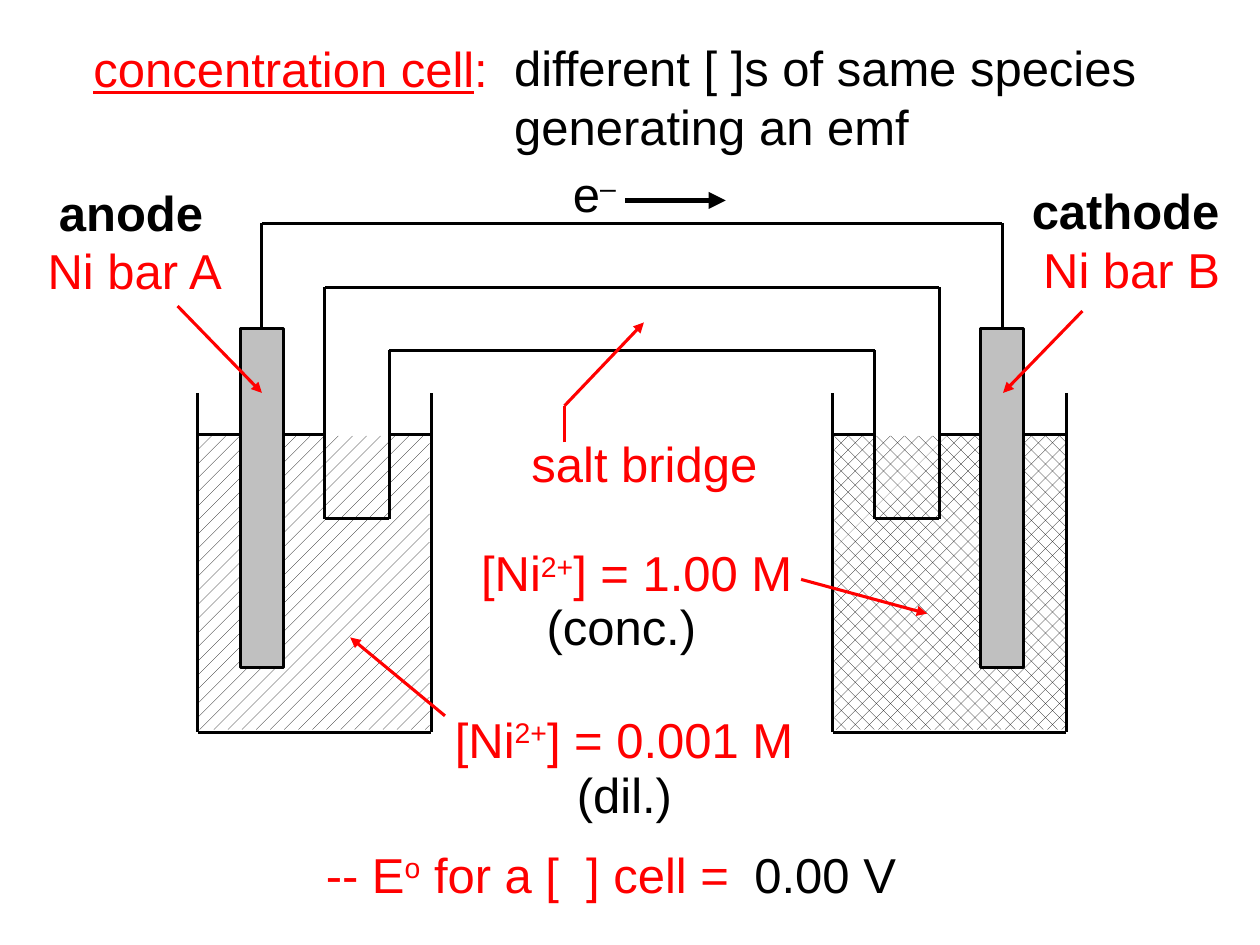
"""Build a slide explaining a nickel concentration cell."""
from dataclasses import dataclass
from itertools import pairwise

from lxml import etree
from pptx import Presentation
from pptx import util as u
from pptx.dml.color import RGBColor
from pptx.enum import dml, shapes, text
from pptx.oxml.ns import qn

BLACK, RED, GREY, WHITE = "000000", "FF0000", "C0C0C0", "FFFFFF"
MIRROR_SUM = 25.48
Point = tuple[float, float]


@dataclass
class Label:
    """A text with carets around its superscripts, placed in centimetres."""
    content: str
    left: float
    top: float
    width: float
    height: float = 1.45
    color: str = BLACK
    bold: bool = False
    wrap: bool = False
    align: text.PP_ALIGN = text.PP_ALIGN.LEFT


@dataclass
class Route:
    """A chain of straight segments, optionally ending in an arrowhead."""
    points: list[Point]
    color: str = BLACK
    width: float = 1.75
    arrow: bool = False


def rgb(value: str) -> RGBColor:
    """Turn a hex string into a colour."""
    return RGBColor.from_string(value)


def cm(*values: float) -> list[u.Cm]:
    """Turn numbers into lengths."""
    return [u.Cm(value) for value in values]


def write(paragraph, content: str, color: str, bold: bool = False) -> None:
    """Add the runs of a content, raising the parts between carets."""
    for index, part in enumerate(content.split("^")):
        if part:
            run = paragraph.add_run()
            run.text = part
            run.font.name, run.font.size = "Arial", u.Pt(28)
            run.font.bold = bold
            run.font.color.rgb = rgb(color)
            if index % 2:
                run.font._element.set("baseline", "30000")


def draw_label(slide, label: Label) -> None:
    """Draw a label as a text box."""
    box = slide.shapes.add_textbox(*cm(label.left, label.top, label.width, label.height))
    box.text_frame.word_wrap = label.wrap
    paragraph = box.text_frame.paragraphs[0]
    paragraph.alignment = label.align
    write(paragraph, label.content, label.color, label.bold)


def draw_route(slide, route: Route) -> None:
    """Draw each segment of a route as a connector."""
    for start, end in pairwise(route.points):
        segment = slide.shapes.add_connector(shapes.MSO_CONNECTOR.STRAIGHT, *cm(*start, *end))
        segment.line.color.rgb = rgb(route.color)
        segment.line.width = u.Pt(route.width)
        etree.SubElement(segment._element.spPr, qn("a:effectLst"))
    if route.arrow:
        etree.SubElement(segment.line._get_or_add_ln(), qn("a:tailEnd"), type="triangle")


def draw_rectangle(slide, left: float, top: float, width: float, height: float):
    """Draw a plain rectangle without shadow."""
    rectangle = slide.shapes.add_shape(
        shapes.MSO_SHAPE.RECTANGLE, *cm(left, top, width, height))
    rectangle.shadow.inherit = False
    return rectangle


def draw_half_cell(slide, mirrored: bool, pattern: dml.MSO_PATTERN) -> None:
    """Draw one beaker with its solution, electrode and wire."""
    def across(x: float, width: float = 0) -> float:
        """Reflect a left edge when the half cell is mirrored."""
        return MIRROR_SUM - x - width if mirrored else x

    solution = draw_rectangle(slide, across(3.99, 4.67), 8.79, 4.67, 5.92)
    solution.fill.patterned()
    solution.fill.pattern = pattern
    solution.fill.fore_color.rgb = rgb(BLACK)
    solution.fill.back_color.rgb = rgb(WHITE)
    solution.line.fill.background()

    electrode = draw_rectangle(slide, across(4.85, 0.86), 6.63, 0.86, 6.83)
    electrode.fill.solid()
    electrode.fill.fore_color.rgb = rgb(GREY)
    electrode.line.color.rgb = rgb(BLACK)
    electrode.line.width = u.Pt(1.75)

    beaker = [(3.99, 7.92), (3.99, 14.76), (8.69, 14.76), (8.69, 7.92)]
    wire = [(5.28, 6.63), (5.28, 4.5)]
    surface = [[(a, 8.76), (b, 8.76)] for a, b in ((3.99, 4.85), (5.71, 6.55), (7.85, 8.69))]
    for points in (beaker, wire, *surface):
        draw_route(slide, Route([(across(x), y) for x, y in points]))


def place_heading(placeholder, lines: list[str], color: str, box: Label) -> None:
    """Move a placeholder and fill it with unbulleted lines."""
    placeholder.left, placeholder.top, placeholder.width, placeholder.height = cm(
        box.left, box.top, box.width, box.height)
    frame = placeholder.text_frame
    frame.word_wrap = False
    frame.auto_size = text.MSO_AUTO_SIZE.NONE
    frame.vertical_anchor = text.MSO_ANCHOR.MIDDLE
    for index, line in enumerate(lines):
        paragraph = frame.add_paragraph() if index else frame.paragraphs[0]
        paragraph.alignment = text.PP_ALIGN.LEFT
        paragraph.space_before = u.Pt(0)
        properties = paragraph._p.get_or_add_pPr()
        properties.set("marL", "0")
        properties.set("indent", "0")
        etree.SubElement(properties, qn("a:buNone"))
        write(paragraph, line, color)


BRIDGE = [
    Route([(6.55, 5.79), (6.55, 10.46), (7.85, 10.46), (7.85, 7.06),
           (17.63, 7.06), (17.63, 10.46), (18.93, 10.46), (18.93, 5.79), (6.55, 5.79)]),
    Route([(5.28, 4.5), (20.2, 4.5)]),
]
POINTERS = [
    Route([(11.38, 8.92), (11.38, 8.18), (12.98, 6.5)], RED, arrow=True),
    Route([(21.82, 6.27), (20.22, 7.92)], RED, arrow=True),
    Route([(3.58, 6.17), (5.28, 7.92)], RED, arrow=True),
    Route([(8.97, 14.43), (7.06, 12.85)], RED, arrow=True),
    Route([(16.15, 11.68), (18.69, 12.37)], RED, arrow=True),
    Route([(12.6, 4.04), (14.63, 4.04)], width=3.25, arrow=True),
]
LABELS = [
    Label("anode", 0.94, 3.56, 3.45, bold=True),
    Label("cathode", 20.55, 3.51, 4.34, bold=True),
    Label("Ni bar A", 0.71, 4.72, 4.27, 1.3, RED, wrap=True),
    Label("Ni bar B", 20.78, 4.7, 4.27, 1.3, RED, wrap=True),
    Label("e^–^", 11.3, 3.18, 1.45),
    Label("salt bridge", 10.21, 8.61, 5.56, 1.19, RED, wrap=True, align=text.PP_ALIGN.CENTER),
    Label("[Ni^2+^] = 1.00 M", 9.45, 10.82, 8.23, 1.27, RED, wrap=True),
    Label("(conc.)", 10.77, 11.91, 3.53),
    Label("[Ni^2+^] = 0.001 M", 8.92, 14.17, 9.09, 1.27, RED, wrap=True),
    Label("(dil.)", 11.38, 15.29, 2.44),
    Label("-- E^o^ for a [  ] cell =", 6.32, 16.89, 8.99, color=RED),
    Label("0.00 V", 14.96, 16.89, 3.38),
]


def main() -> None:
    """Assemble and save the slide."""
    deck = Presentation()
    deck.slide_width, deck.slide_height = cm(25.4, 19.05)
    slide = deck.slides.add_slide(deck.slide_layouts[1])
    term, definition = slide.placeholders
    place_heading(term, ["concentration cell", ], RED, Label("", 1.63, 0.64, 8.76))
    heading = term.text_frame.paragraphs[0]
    heading.runs[0].font.underline = True
    write(heading, ":", RED)
    place_heading(definition, ["different [ ]s of same species", "generating an emf"],
                  BLACK, Label("", 10.11, 0.64, 13.11, 2.62))

    draw_half_cell(slide, False, dml.MSO_PATTERN.PERCENT_10)
    draw_half_cell(slide, True, dml.MSO_PATTERN.PERCENT_25)
    for route in BRIDGE + POINTERS:
        draw_route(slide, route)
    for label in LABELS:
        draw_label(slide, label)
    deck.save("out.pptx")


if __name__ == "__main__":
    main()
